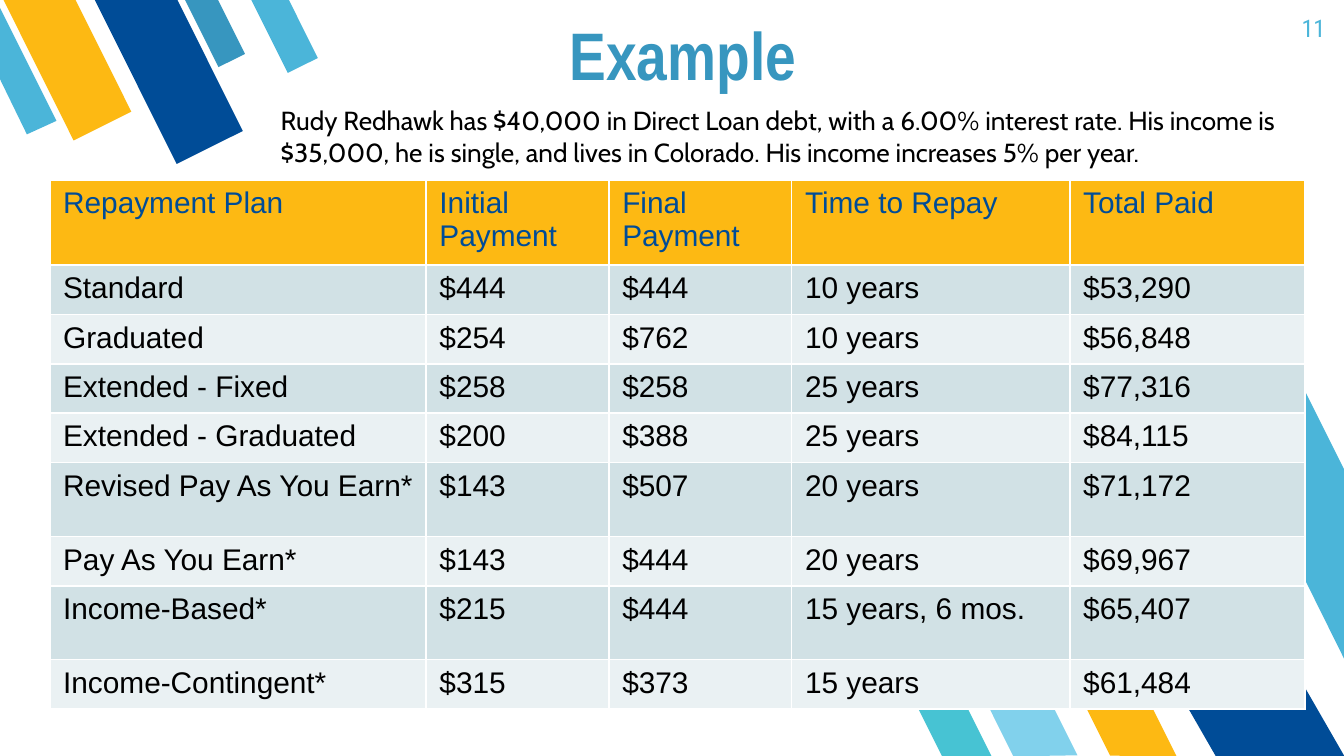
"""Build a slide comparing student loan repayment plans."""
from lxml.etree import SubElement
from pptx import Presentation
from pptx.dml.color import RGBColor
from pptx.enum.shapes import MSO_SHAPE
from pptx.enum.text import MSO_ANCHOR, PP_ALIGN
from pptx.oxml.ns import qn
from pptx.util import Inches, Pt

BLACK = RGBColor(0x00, 0x00, 0x00)
STEEL = RGBColor(0x37, 0x96, 0xBF)
GOLD = RGBColor(0xFD, 0xB9, 0x13)
NAVY = RGBColor(0x00, 0x4C, 0x97)
SKY = RGBColor(0x4B, 0xB5, 0xD9)
PALE_SKY = RGBColor(0x81, 0xD1, 0xEC)
TEAL = RGBColor(0x47, 0xC3, 0xD3)
BAND_DARK = RGBColor(0xD1, 0xE1, 0xE5)
BAND_LIGHT = RGBColor(0xEA, 0xF1, 0xF3)

presentation = Presentation()
presentation.slide_width = Inches(10)
presentation.slide_height = Inches(10) * 9 // 16
slide = presentation.slides.add_slide(presentation.slide_layouts[6])


def paint(stripe, color):
    stripe.shadow.inherit = False
    stripe.fill.solid()
    stripe.fill.fore_color.rgb = color
    stripe.line.fill.background()


def write(frame, text, size, font, color, bold=False):
    frame.text = text
    run_font = frame.paragraphs[0].runs[0].font
    run_font.size = Pt(size)
    run_font.name = font
    run_font.color.rgb = color
    run_font.bold = bold


stripes = [
    (1.49, -0.08, 0.22, 0.56, 333.5, STEEL),
    (0.26, -0.18, 0.48, 1.18, 333.5, GOLD),
    (0.98, -0.2, 0.55, 1.37, 333.5, NAVY),
    (1.99, -0.1, 0.25, 0.62, 333.5, SKY),
    (7.38, 4.74, 0.43, 1.03, 153.5, PALE_SKY),
    (8.64, 3.63, 0.83, 2.36, 150.1, NAVY),
    (8.09, 4.68, 0.44, 1.1, 153.5, GOLD),
    (6.88, 4.92, 0.33, 0.82, 153.5, TEAL),
]
for left, top, width, height, angle, color in stripes:
    stripe = slide.shapes.add_shape(
        MSO_SHAPE.FLOWCHART_MANUAL_INPUT,
        Inches(left), Inches(top), Inches(width), Inches(height))
    stripe.rotation = angle
    stripe.element.spPr.xfrm.set("flipH", "1")
    paint(stripe, color)

edge_stripes = [
    [(0.2, 1), (0.42, 0.9), (0, 0.06), (0, 0.59)],
    [(9.45, 2.39), (8.89, 2.66), (10, 4.9), (10, 3.49)],
]
for corners in edge_stripes:
    points = [(Inches(x), Inches(y)) for x, y in corners]
    outline = slide.shapes.build_freeform(*points[0])
    outline.add_line_segments(points[1:], close=True)
    paint(outline.convert_to_shape(), SKY)

texts = [
    ("Example", (4.14, 0.06, 2.46, 0.74), 0.1, 36, "Arial Narrow", STEEL,
     True, PP_ALIGN.LEFT, MSO_ANCHOR.BOTTOM),
    ("11", (9.36, 0, 0.6, 0.43), 0.1, 13, "Roboto Condensed", SKY,
     False, PP_ALIGN.RIGHT, MSO_ANCHOR.TOP),
    ("Rudy Redhawk has $40,000 in Direct Loan debt, with a 6.00% interest rate. "
     "His income is $35,000, he is single, and lives in Colorado. "
     "His income increases 5% per year.",
     (1.99, 0.73, 7.72, 0.57), 0.05, 14, "Cabin", BLACK,
     False, PP_ALIGN.LEFT, MSO_ANCHOR.TOP),
]
for text, place, inset, size, font, color, bold, align, anchor in texts:
    frame = slide.shapes.add_textbox(*map(Inches, place)).text_frame
    frame.word_wrap = True
    frame.margin_top = frame.margin_bottom = Inches(inset)
    frame.vertical_anchor = anchor
    write(frame, text, size, font, color, bold)
    frame.paragraphs[0].alignment = align

plans = [
    ("Repayment Plan", "Initial Payment", "Final Payment", "Time to Repay", "Total Paid"),
    ("Standard", "$444", "$444", "10 years", "$53,290"),
    ("Graduated", "$254", "$762", "10 years", "$56,848"),
    ("Extended - Fixed", "$258", "$258", "25 years", "$77,316"),
    ("Extended - Graduated", "$200", "$388", "25 years", "$84,115"),
    ("Revised Pay As You Earn*", "$143", "$507", "20 years", "$71,172"),
    ("Pay As You Earn*", "$143", "$444", "20 years", "$69,967"),
    ("Income-Based*", "$215", "$444", "15 years, 6 mos.", "$65,407"),
    ("Income-Contingent*", "$315", "$373", "15 years", "$61,484"),
]
column_widths = [2.8, 1.36, 1.36, 2.07, 1.75]
tall_rows = (0, 5, 7)
table = slide.shapes.add_table(
    len(plans), len(column_widths),
    Inches(0.37), Inches(1.34), Inches(9.35), Inches(4.01)).table
for column, width in zip(table.columns, column_widths):
    column.width = Inches(width)

for row_index, plan in enumerate(plans):
    is_header = row_index == 0
    table.rows[row_index].height = Inches(0.55 if row_index in tall_rows else 0.32)
    band = GOLD if is_header else BAND_DARK if row_index % 2 else BAND_LIGHT
    for column_index, value in enumerate(plan):
        cell = table.cell(row_index, column_index)
        write(cell.text_frame, value, 16, "Arial", NAVY if is_header else BLACK)
        properties = cell._tc.get_or_add_tcPr()
        for side in ("lnL", "lnR", "lnT", "lnB"):
            border = SubElement(properties, qn(f"a:{side}"), w=str(Pt(1)))
            border_fill = SubElement(border, qn("a:solidFill"))
            SubElement(border_fill, qn("a:srgbClr"), val="FFFFFF")
        cell.fill.solid()
        cell.fill.fore_color.rgb = band

presentation.save("out.pptx")
